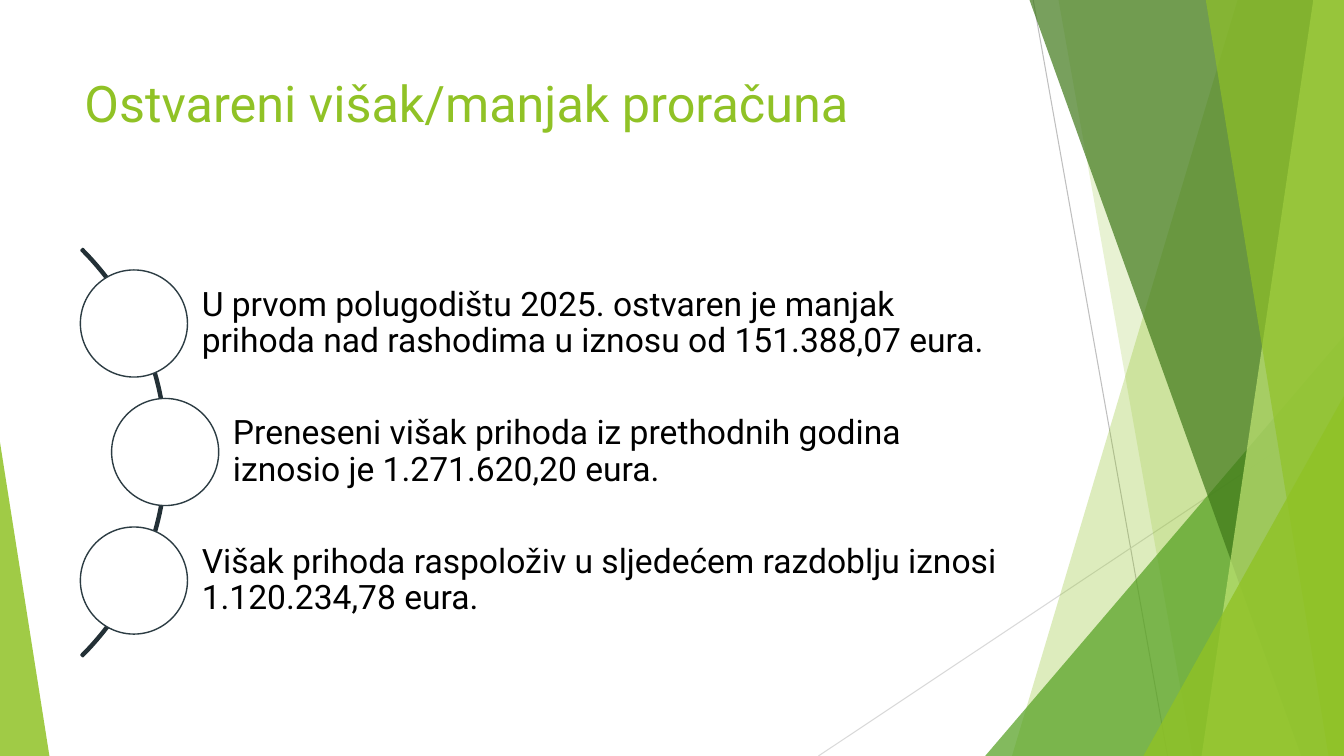
from lxml import etree
from pptx import Presentation
from pptx.dml.color import RGBColor
from pptx.enum.shapes import MSO_CONNECTOR, MSO_SHAPE
from pptx.enum.text import MSO_ANCHOR, PP_ALIGN
from pptx.oxml.ns import qn
from pptx.util import Pt

STRAIGHT = MSO_CONNECTOR.STRAIGHT
TRIANGLE = MSO_SHAPE.ISOSCELES_TRIANGLE
RECTANGLE = MSO_SHAPE.RECTANGLE
OVAL = MSO_SHAPE.OVAL
BLOCK_ARC = MSO_SHAPE.BLOCK_ARC
TOP, MIDDLE = MSO_ANCHOR.TOP, MSO_ANCHOR.MIDDLE
LEFT = PP_ALIGN.LEFT

FONT = "Roboto"
GREEN, WHITE, BLACK = "90C226", "FFFFFF", "000000"
SLIDE_W, SLIDE_H = 960, 540

# Timeline geometry
CIRCLE = 76.5
ROW_TOP, ROW_PITCH = 192.8, 91.8
LABEL_H, LABEL_RIGHT = 61.2, 725.8
ROWS = [
    (57.4, "U prvom polugodištu 2025. ostvaren je manjak prihoda nad rashodima "
           "u iznosu od 151.388,07 eura."),
    (79.7, "Preneseni višak prihoda iz prethodnih godina iznosio je "
           "1.271.620,20 eura."),
    (57.4, "Višak prihoda raspoloživ u sljedećem razdoblju iznosi "
           "1.120.234,78 eura."),
]


def color(hex_value):
    return RGBColor.from_string(hex_value)


def paint(shape, fill=None, opacity=100, line=None, weight=1):
    shape.shadow.inherit = False
    if fill:
        shape.fill.solid()
        shape.fill.fore_color.rgb = color(fill)
        if opacity < 100:
            tint = shape.fill._xPr.find(qn("a:solidFill"))[0]
            etree.SubElement(tint, qn("a:alpha"), val=str(opacity * 1000))
    else:
        shape.fill.background()
    if line:
        shape.line.color.rgb = color(line)
        shape.line.width = Pt(weight)
    else:
        shape.line.fill.background()


def add_preset(slide, kind, left, top, width, height, adjust=(), **style):
    shape = slide.shapes.add_shape(kind, Pt(left), Pt(top), Pt(width), Pt(height))
    for index, value in enumerate(adjust):
        shape.adjustments[index] = value
    paint(shape, **style)
    return shape


def add_ray(slide, x1, y1, x2, y2, line):
    ray = slide.shapes.add_connector(STRAIGHT, Pt(x1), Pt(y1), Pt(x2), Pt(y2))
    ray.line.color.rgb = color(line)
    ray.line.width = Pt(0.75)
    etree.SubElement(ray._element.spPr, qn("a:effectLst"))


def add_band(slide, top_x, bottom_x, fill, opacity):
    """Band from the slanted edge top_x-bottom_x to the right slide edge."""
    outline = slide.shapes.build_freeform(Pt(top_x), Pt(-0.6))
    outline.add_line_segments([(Pt(SLIDE_W), Pt(-0.6)), (Pt(SLIDE_W), Pt(SLIDE_H)),
                               (Pt(bottom_x), Pt(SLIDE_H))], close=True)
    paint(outline.convert_to_shape(), fill, opacity)


def add_corner(slide, left, top, width, apex, fill, opacity):
    add_preset(slide, TRIANGLE, left, top, width, SLIDE_H - top,
               adjust=[apex], fill=fill, opacity=opacity)


def write(shape, text, size, ink, anchor=TOP, insets=(7.2, 3.6, 7.2, 3.6), spacing=1.0):
    frame = shape.text_frame
    frame.word_wrap = True
    frame.vertical_anchor = anchor
    (frame.margin_left, frame.margin_top,
     frame.margin_right, frame.margin_bottom) = map(Pt, insets)
    paragraph = frame.paragraphs[0]
    paragraph.alignment = LEFT
    paragraph.line_spacing = spacing
    run = paragraph.add_run()
    run.text = text
    run.font.name = FONT
    run.font.size = Pt(size)
    run.font.color.rgb = color(ink)


def add_facets(slide):
    add_ray(slide, 738, 0, 834, SLIDE_H, "BFBFBF")
    add_ray(slide, SLIDE_W, 290, 584.6, SLIDE_H, "D9D9D9")
    add_band(slide, 884.2, 722.9, GREEN, 30)
    add_band(slide, 756, 851.8, GREEN, 20)
    add_corner(slide, 703.7, 240, 256.3, 1, "54A021", 72)
    add_band(slide, 735.2, 929.5, "3F7819", 70)
    add_band(slide, 938.2, 858.3, "C0E474", 70)
    add_band(slide, 861.2, 949, GREEN, 65)
    add_corner(slide, 816.7, 282.8, 143.3, 1, GREEN, 80)
    add_corner(slide, 0, 316, 35.3, 0, GREEN, 85)


def add_timeline(slide):
    add_preset(slide, BLOCK_ARC, -292.3, 117.4, 411.8, 411.8,
               adjust=(189, 27, 0.004), line="233036", weight=1.5)
    for row, (left, text) in enumerate(ROWS):
        top = ROW_TOP + row * ROW_PITCH
        center = left + CIRCLE / 2
        label = add_preset(slide, RECTANGLE, center, top + (CIRCLE - LABEL_H) / 2,
                           LABEL_RIGHT - center, LABEL_H, fill=WHITE)
        write(label, text, 24, BLACK, anchor=MIDDLE,
              insets=(48.5, 4.8, 4.8, 4.8), spacing=0.9)
        add_preset(slide, OVAL, left, top, CIRCLE, CIRCLE, fill=WHITE, line="2C3C43")


def main():
    deck = Presentation()
    deck.slide_width, deck.slide_height = Pt(SLIDE_W), Pt(SLIDE_H)
    slide = deck.slides.add_slide(deck.slide_layouts[6])

    # Background facets
    add_facets(slide)

    # Title
    title = slide.shapes.add_textbox(Pt(53.3), Pt(48), Pt(676.8), Pt(104))
    write(title, "Ostvareni višak/manjak proračuna", 36, GREEN)

    # Budget results along the arc
    add_timeline(slide)

    deck.save("out.pptx")


if __name__ == "__main__":
    main()
